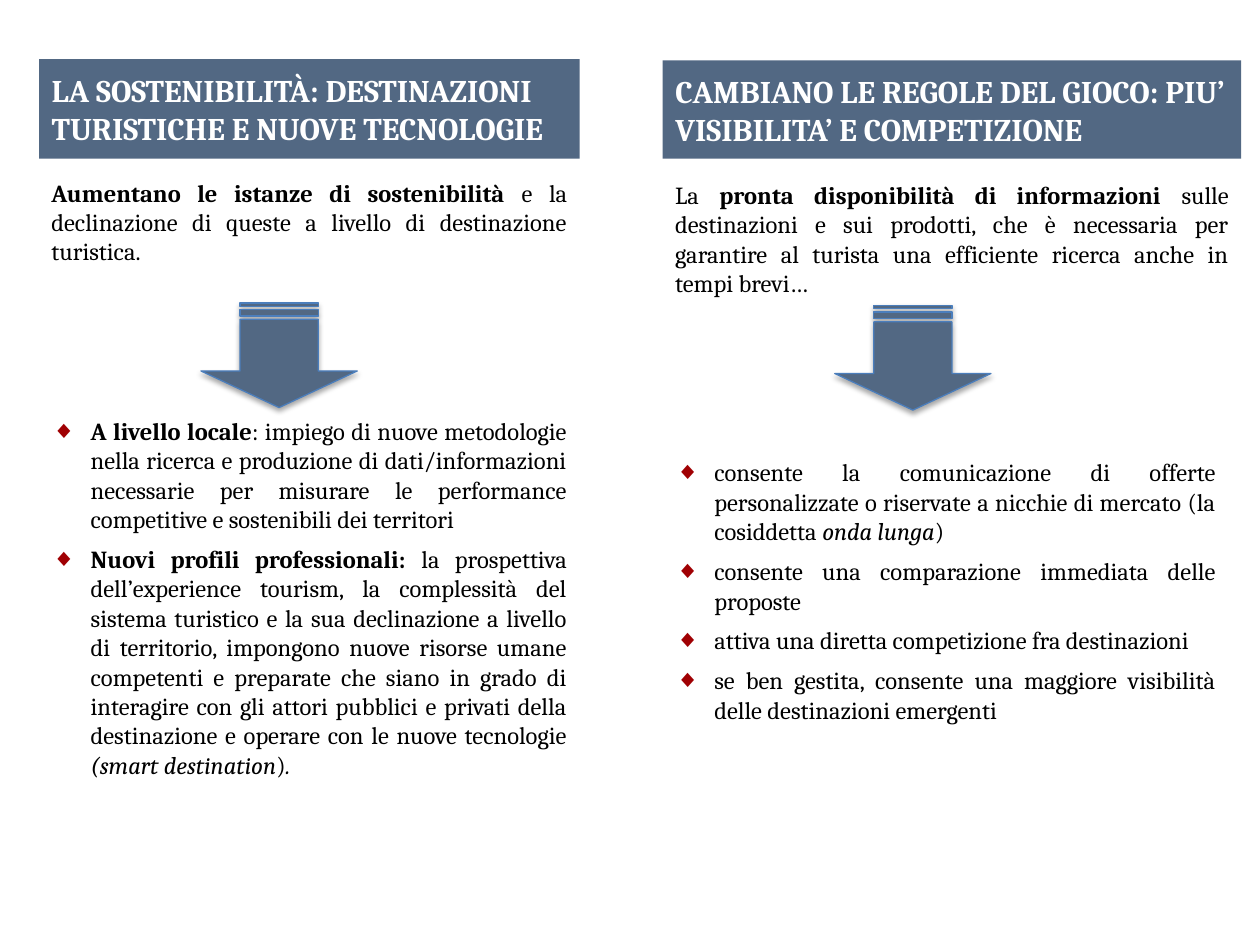
from lxml.etree import SubElement
from pptx import Presentation
from pptx.dml.color import RGBColor
from pptx.enum.shapes import MSO_SHAPE
from pptx.enum.text import MSO_ANCHOR, MSO_AUTO_SIZE, PP_ALIGN
from pptx.oxml import parse_xml
from pptx.oxml.ns import nsdecls, qn
from pptx.util import Inches, Pt

SLATE = RGBColor(0x52, 0x68, 0x83)
EDGE = RGBColor(0x4B, 0x7E, 0xBC)
RED = RGBColor(0xA0, 0x00, 0x03)
BLACK = RGBColor(0, 0, 0)
WHITE = RGBColor(255, 255, 255)
FONT = "Cambria"

# Each paragraph is a list of (text, style) runs; style holds "b" and/or "i"
LEFT = {
    "heading": "LA SOSTENIBILITÀ: DESTINAZIONI TURISTICHE E NUOVE TECNOLOGIE",
    "intro": [("Aumentano le istanze di sostenibilità ", "b"),
              ("e la declinazione di queste a livello di destinazione turistica.", "")],
    "bullets": [
        [("A livello locale", "b"),
         (": impiego di nuove metodologie nella ricerca e produzione di "
          "dati/informazioni necessarie per misurare le performance competitive "
          "e sostenibili dei territori", "")],
        [("Nuovi profili professionali: ", "b"),
         ("la prospettiva dell’experience tourism, la complessità del sistema "
          "turistico e la sua declinazione a livello di territorio, impongono nuove "
          "risorse umane competenti e preparate che siano in grado di interagire con "
          "gli attori pubblici e privati della destinazione e operare con le nuove "
          "tecnologie ", ""),
         ("(smart destination", "i"), (")", ""), (".", "i")],
    ],
}
RIGHT = {
    "heading": "CAMBIANO LE REGOLE DEL GIOCO: PIU’ VISIBILITA’ E COMPETIZIONE",
    "intro": [("La ", ""), ("pronta disponibilità di informazioni ", "b"),
              ("sulle destinazioni e sui prodotti, che è necessaria per garantire al "
               "turista una efficiente ricerca anche in tempi brevi…", "")],
    "bullets": [
        [("consente la comunicazione di offerte personalizzate o riservate a nicchie "
          "di mercato (la cosiddetta ", ""), ("onda lunga", "i"), (")", "")],
        [("consente una comparazione immediata delle proposte", "")],
        [("attiva una diretta competizione fra destinazioni", "")],
        [("se ben gestita, consente una maggiore visibilità delle destinazioni "
          "emergenti", "")],
    ],
}


def place(sp, box):
    sp.left, sp.top, sp.width, sp.height = (Inches(v) for v in box)


def add_bullet(p):
    pPr = p._p.get_or_add_pPr()
    pPr.set("marL", str(Inches(0.31)))
    pPr.set("indent", str(-Inches(0.31)))
    color = SubElement(pPr, qn("a:buClr"))
    SubElement(color, qn("a:srgbClr"), val=str(RED))
    SubElement(pPr, qn("a:buFont"), typeface="Arial")
    SubElement(pPr, qn("a:buChar"), char="◆")


def fill_text(sp, paragraphs, size=14, color=BLACK, align=PP_ALIGN.JUSTIFY,
              anchor=MSO_ANCHOR.TOP, bullets=False):
    tf = sp.text_frame
    tf.word_wrap = True
    tf.auto_size = MSO_AUTO_SIZE.NONE
    tf.vertical_anchor = anchor
    for i, runs in enumerate(paragraphs):
        p = tf.add_paragraph() if i else tf.paragraphs[0]
        p.alignment = align
        p.space_before = Pt(0)
        p.space_after = Pt(6 if bullets else 0)
        if bullets:
            add_bullet(p)
        for text, style in runs:
            r = p.add_run()
            r.text = text
            r.font.name, r.font.size = FONT, Pt(size)
            r.font.bold, r.font.italic = "b" in style, "i" in style
            r.font.color.rgb = color


def add_heading(sp, box, text):
    place(sp, box)
    sp.fill.solid()
    sp.fill.fore_color.rgb = SLATE
    fill_text(sp, [[(text, "b")]], 18, WHITE, PP_ALIGN.LEFT, MSO_ANCHOR.MIDDLE)


def add_intro(s, box, runs):
    sp = s.shapes.add_textbox(*(Inches(v) for v in box))
    fill_text(sp, [runs])


def add_list(sp, box, items):
    place(sp, box)
    fill_text(sp, items, bullets=True)


def add_down_arrow(s, box):
    sp = s.shapes.add_shape(MSO_SHAPE.STRIPED_RIGHT_ARROW, *(Inches(v) for v in box))
    sp.rotation = 90
    sp.adjustments[0], sp.adjustments[1] = 0.5, 0.35
    sp.fill.solid()
    sp.fill.fore_color.rgb = SLATE
    sp.line.color.rgb = EDGE
    sp.line.width = Pt(0.75)
    # Soft shadow straight below
    sp._element.spPr.append(parse_xml(
        f'<a:effectLst {nsdecls("a")}><a:outerShdw blurRad="{Pt(3.1)}" '
        f'dist="{Pt(1.8)}" dir="5400000" rotWithShape="0"><a:srgbClr val="000000">'
        '<a:alpha val="35000"/></a:srgbClr></a:outerShdw></a:effectLst>'))


def add_column(s, heading, body, content, x, width, tops, heights, list_width, arrow_x):
    """Heading, introduction, arrow and list, from top to bottom."""
    add_heading(heading, (x, tops[0], width, heights[0]), content["heading"])
    add_intro(s, (x, tops[1], width, heights[1]), content["intro"])
    add_list(body, (x, tops[3], list_width, heights[2]), content["bullets"])
    add_down_arrow(s, (arrow_x, tops[2], 0.83, 1.24))


def main():
    prs = Presentation()
    prs.slide_width, prs.slide_height = Inches(10), Inches(7.5)
    s = prs.slides.add_slide(prs.slide_layouts.get_by_name("Comparison"))
    ph = {sp.placeholder_format.idx: sp for sp in s.placeholders}

    # Left column
    add_column(s, ph[0], ph[2], LEFT, 0.31, 4.29, (0.47, 1.36, 2.2, 3.25),
               (0.79, 0.81, 3.25), 4.29, 1.8)
    # Right column
    add_column(s, ph[1], ph[4], RIGHT, 5.26, 4.59, (0.48, 1.38, 2.22, 3.58),
               (0.78, 1.04, 2.24), 4.49, 6.83)

    # Unused placeholder
    spare = ph[3]._element
    spare.getparent().remove(spare)
    prs.save("out.pptx")


if __name__ == "__main__":
    main()
